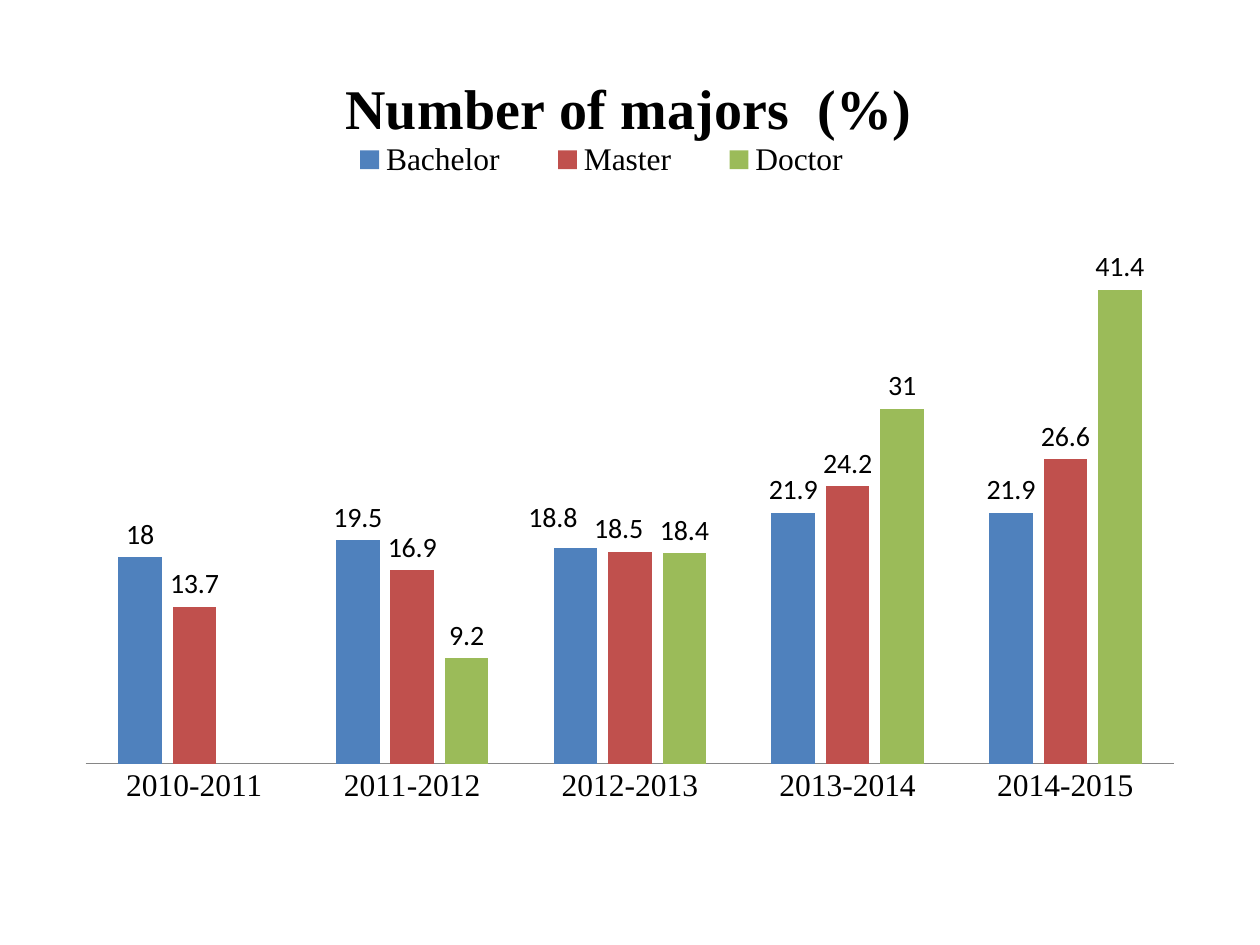
from dataclasses import dataclass

from lxml import etree
from pptx import Presentation
from pptx.chart.data import CategoryChartData
from pptx.dml.color import RGBColor
from pptx.enum.chart import XL_CHART_TYPE, XL_LABEL_POSITION, XL_LEGEND_POSITION, XL_TICK_MARK
from pptx.oxml.ns import qn
from pptx.util import Inches, Pt

COLUMNS = XL_CHART_TYPE.COLUMN_CLUSTERED
LEGEND_TOP = XL_LEGEND_POSITION.TOP
OUTSIDE_END = XL_LABEL_POSITION.OUTSIDE_END
NO_TICK = XL_TICK_MARK.NONE

YEARS = ["2010-2011", "2011-2012", "2012-2013", "2013-2014", "2014-2015"]
MAJORS = {
    "Bachelor": [18, 19.5, 18.8, 21.9, 21.9],
    "Master": [13.7, 16.9, 18.5, 24.2, 26.6],
    "Doctor": [None, 9.2, 18.4, 31, 41.4],
}
# (series, point) -> label shift as a share of the chart
LABEL_SHIFTS = {(0, 2): {"x": -0.02, "y": -0.01}, (1, 2): {"x": -0.01, "y": 0}}
EDGES = {"xMode": "edge", "yMode": "edge"}


@dataclass(frozen=True)
class Theme:
    heading_font: str = "Times New Roman"
    body_font: str = "Calibri"
    text: str = "000000"
    axis: str = "868686"
    series: tuple = ("4F81BD", "C0504D", "9BBB59")
    title_size: int = 32
    axis_size: int = 18
    label_size: int = 16
    base_size: int = 10


def place(parent, position, **values):
    """Give a chart part a manual layout as its child number `position`."""
    for old in parent.findall(qn("c:layout")):
        parent.remove(old)
    layout = etree.Element(qn("c:layout"))
    manual = etree.SubElement(layout, qn("c:manualLayout"))
    for name, value in values.items():
        etree.SubElement(manual, qn(f"c:{name}")).set("val", str(value))
    parent.insert(position, layout)


class SlideBuilder:
    def __init__(self, page, theme):
        self.page = page
        self.theme = theme

    def style_font(self, font, name, size, bold=False):
        font.name = name
        font.size = Pt(size)
        font.bold = bold
        font.color.rgb = RGBColor.from_string(self.theme.text)

    def add_column_chart(self, categories, series, left, top, width, height):
        data = CategoryChartData()
        data.categories = categories
        for name, values in series.items():
            data.add_series(name, values)
        chart = self.page.shapes.add_chart(COLUMNS, left, top, width, height, data).chart
        self.style_font(chart.font, self.theme.body_font, self.theme.base_size)
        self.style_axes(chart)
        plot = chart.plots[0]
        self.style_columns(plot)
        self.shift_labels(plot)
        place(plot._element.getparent(), 0, layoutTarget="inner", **EDGES,
              x=0.02, y=0.26, w=0.96, h=0.64)
        return chart

    def style_axes(self, chart):
        category_axis = chart.category_axis
        category_axis.major_tick_mark = NO_TICK
        line = category_axis.format.line
        line.color.rgb = RGBColor.from_string(self.theme.axis)
        line.width = Pt(0.75)
        self.style_font(category_axis.tick_labels.font, self.theme.heading_font, self.theme.axis_size)
        value_axis = chart.value_axis
        value_axis.minimum_scale, value_axis.maximum_scale = 0, 45
        value_axis.has_major_gridlines = False
        value_axis.visible = False

    def style_columns(self, plot):
        plot.gap_width = 150
        plot.overlap = -25
        plot.vary_by_categories = False
        for series, color in zip(plot.series, self.theme.series):
            series.format.fill.solid()
            series.format.fill.fore_color.rgb = RGBColor.from_string(color)
            labels = series.data_labels
            labels.show_value = True
            labels.position = OUTSIDE_END
            self.style_font(labels.font, self.theme.body_font, self.theme.label_size)

    def shift_labels(self, plot):
        for (series_index, point_index), shift in LABEL_SHIFTS.items():
            series = plot.series[series_index]
            label = series.points[point_index].data_label
            self.style_font(label.font, self.theme.body_font, self.theme.label_size)
            label.position = OUTSIDE_END
            place(series.data_labels._element.find(qn("c:dLbl")), 1, **shift)

    def add_chart_title(self, chart, text):
        title = chart.chart_title
        title.text_frame.text = text
        para = title.text_frame.paragraphs[0]
        self.style_font(para.font, self.theme.heading_font, self.theme.title_size, True)
        place(title._element, 1, **EDGES, x=0.24, y=0.03)

    def add_legend(self, chart):
        chart.has_legend = True
        legend = chart.legend
        legend.position = LEGEND_TOP
        legend.include_in_layout = False
        self.style_font(legend.font, self.theme.heading_font, self.theme.axis_size)
        place(legend._element, 1, **EDGES, x=0.22, y=0.12, w=0.51, h=0.06)


def main():
    deck = Presentation()
    deck.slide_width, deck.slide_height = Inches(10), Inches(7.5)
    page = deck.slides.add_slide(deck.slide_layouts[6])
    builder = SlideBuilder(page, Theme())
    chart = builder.add_column_chart(YEARS, MAJORS, Inches(0.5), Inches(0.31), Inches(9), Inches(6.39))
    builder.add_chart_title(chart, "Number of majors  (%)")
    builder.add_legend(chart)
    deck.save("out.pptx")


if __name__ == "__main__":
    main()
